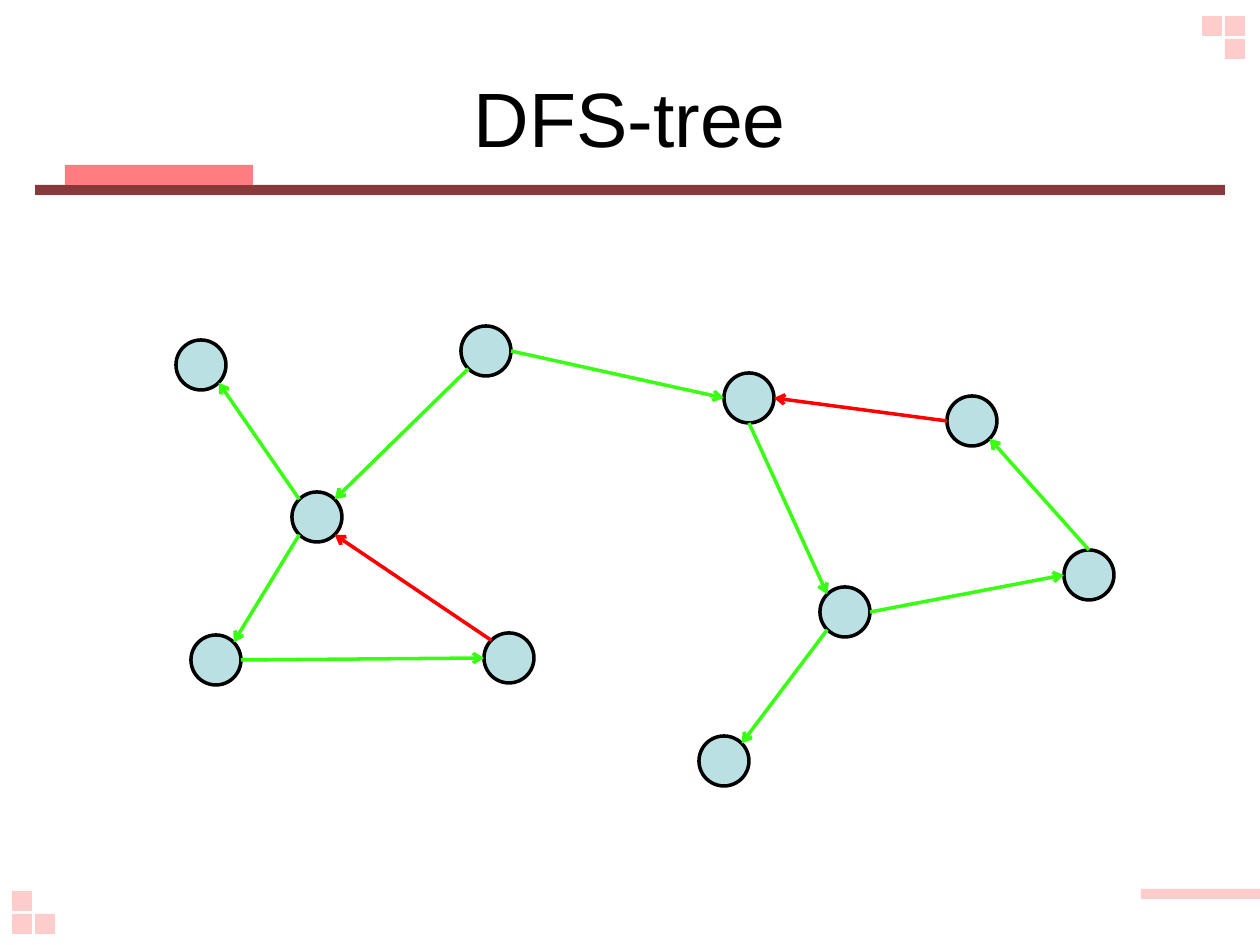
import math
from dataclasses import dataclass

import pptx
import pptx.dml.color
import pptx.enum.shapes
import pptx.enum.text
import pptx.oxml
import pptx.oxml.ns
import pptx.util

PX_PER_INCH = 126
SHAPES = pptx.enum.shapes.MSO_SHAPE


@dataclass(frozen=True)
class Theme:
    font: str = "Arial"
    title_size: int = 44
    line_width: int = 2
    text: str = "000000"
    bar: str = "883A3A"
    tab: str = "FF7C80"
    accent: str = "FFCCCC"
    node: str = "BBE0E3"
    outline: str = "000000"
    tree_edge: str = "39FF13"
    back_edge: str = "FF0000"


def emu(px):
    return pptx.util.Emu(round(px * 914400 / PX_PER_INCH))


def rgb(value):
    return pptx.dml.color.RGBColor.from_string(value)


class SlideBuilder:
    def __init__(self, slide, theme):
        self.slide = slide
        self.theme = theme

    def shape(self, kind, left, top, width, height, fill, outline=None):
        shape = self.slide.shapes.add_shape(
            kind, emu(left), emu(top), emu(width), emu(height))
        shape.shadow.inherit = False
        shape.fill.solid()
        shape.fill.fore_color.rgb = rgb(fill)
        if outline:
            shape.line.color.rgb = rgb(outline)
            shape.line.width = pptx.util.Pt(self.theme.line_width)
        else:
            shape.line.fill.background()

    def rectangle(self, left, top, width, height, fill):
        self.shape(SHAPES.RECTANGLE, left, top, width, height, fill)

    def node(self, center, radius):
        x, y = center
        self.shape(SHAPES.OVAL, x - radius, y - radius, 2 * radius, 2 * radius,
                   self.theme.node, self.theme.outline)

    def title(self, text, left, top, width, height):
        box = self.slide.shapes.add_textbox(
            emu(left), emu(top), emu(width), emu(height))
        frame = box.text_frame
        frame.word_wrap = True
        frame.vertical_anchor = pptx.enum.text.MSO_ANCHOR.MIDDLE
        paragraph = frame.paragraphs[0]
        paragraph.text = text
        paragraph.alignment = pptx.enum.text.PP_ALIGN.CENTER
        paragraph.font.name = self.theme.font
        paragraph.font.size = pptx.util.Pt(self.theme.title_size)
        paragraph.font.color.rgb = rgb(self.theme.text)

    def arrow(self, start, end, color):
        connector = self.slide.shapes.add_connector(
            pptx.enum.shapes.MSO_CONNECTOR.STRAIGHT,
            *(emu(value) for value in (*start, *end)))
        connector.line.color.rgb = rgb(color)
        connector.line.width = pptx.util.Pt(self.theme.line_width)
        properties = connector.element.spPr
        namespace = pptx.oxml.ns.nsdecls("a")
        properties.find(pptx.oxml.ns.qn("a:ln")).append(
            pptx.oxml.parse_xml(f'<a:tailEnd {namespace} type="arrow"/>'))
        properties.append(pptx.oxml.parse_xml(f"<a:effectLst {namespace}/>"))


RADIUS = 25
NODES = {
    "root": (486, 351),
    "left hub": (317, 517),
    "left return": (509, 658),
    "right top": (749, 398),
    "right leaf": (724, 761),
    "right return": (972, 421),
    "right far": (1089, 575),
    "right hub": (845, 612),
    "left bottom": (216, 660),
    "left leaf": (201, 365),
}
SITES = {"N": (0, -1), "NE": (1, -1), "E": (1, 0), "SE": (1, 1),
         "S": (0, 1), "SW": (-1, 1), "W": (-1, 0), "NW": (-1, -1)}
TREE_EDGES = [
    ("root", "SW", "left hub", "NE"),
    ("left hub", "NW", "left leaf", "SE"),
    ("left hub", "SW", "left bottom", "NE"),
    ("left bottom", "E", "left return", "W"),
    ("root", "E", "right top", "W"),
    ("right top", "S", "right hub", "NW"),
    ("right hub", "SW", "right leaf", "NE"),
    ("right hub", "E", "right far", "W"),
    ("right far", "N", "right return", "SE"),
]
BACK_EDGES = [
    ("left return", "NW", "left hub", "SE"),
    ("right return", "W", "right top", "E"),
]
SQUARE = 20
SQUARE_PITCH = 23
CORNERS = [
    (1202, 16, [(1, 0), (0, 0), (1, 1)]),
    (12, 891, [(0, 1), (1, 1), (0, 0)]),
]


def rim_point(name, site):
    x, y = NODES[name]
    dx, dy = SITES[site]
    reach = RADIUS / math.hypot(dx, dy)
    return x + dx * reach, y + dy * reach


def main():
    presentation = pptx.Presentation()
    presentation.slide_width = emu(1260)
    presentation.slide_height = emu(945)
    theme = Theme()
    builder = SlideBuilder(
        presentation.slides.add_slide(presentation.slide_layouts[6]), theme)

    builder.rectangle(35, 185, 1190, 10, theme.bar)
    builder.rectangle(65, 165, 188, 20, theme.tab)
    builder.rectangle(1141, 889, 119, 10, theme.accent)
    for left, top, cells in CORNERS:
        for column, row in cells:
            builder.rectangle(left + column * SQUARE_PITCH, top + row * SQUARE_PITCH,
                              SQUARE, SQUARE, theme.accent)

    builder.title("DFS-tree", 63, 38, 1134, 158)
    for center in NODES.values():
        builder.node(center, RADIUS)
    for edges, color in ((TREE_EDGES, theme.tree_edge), (BACK_EDGES, theme.back_edge)):
        for source, source_site, target, target_site in edges:
            builder.arrow(rim_point(source, source_site),
                          rim_point(target, target_site), color)

    presentation.save("out.pptx")


if __name__ == "__main__":
    main()
